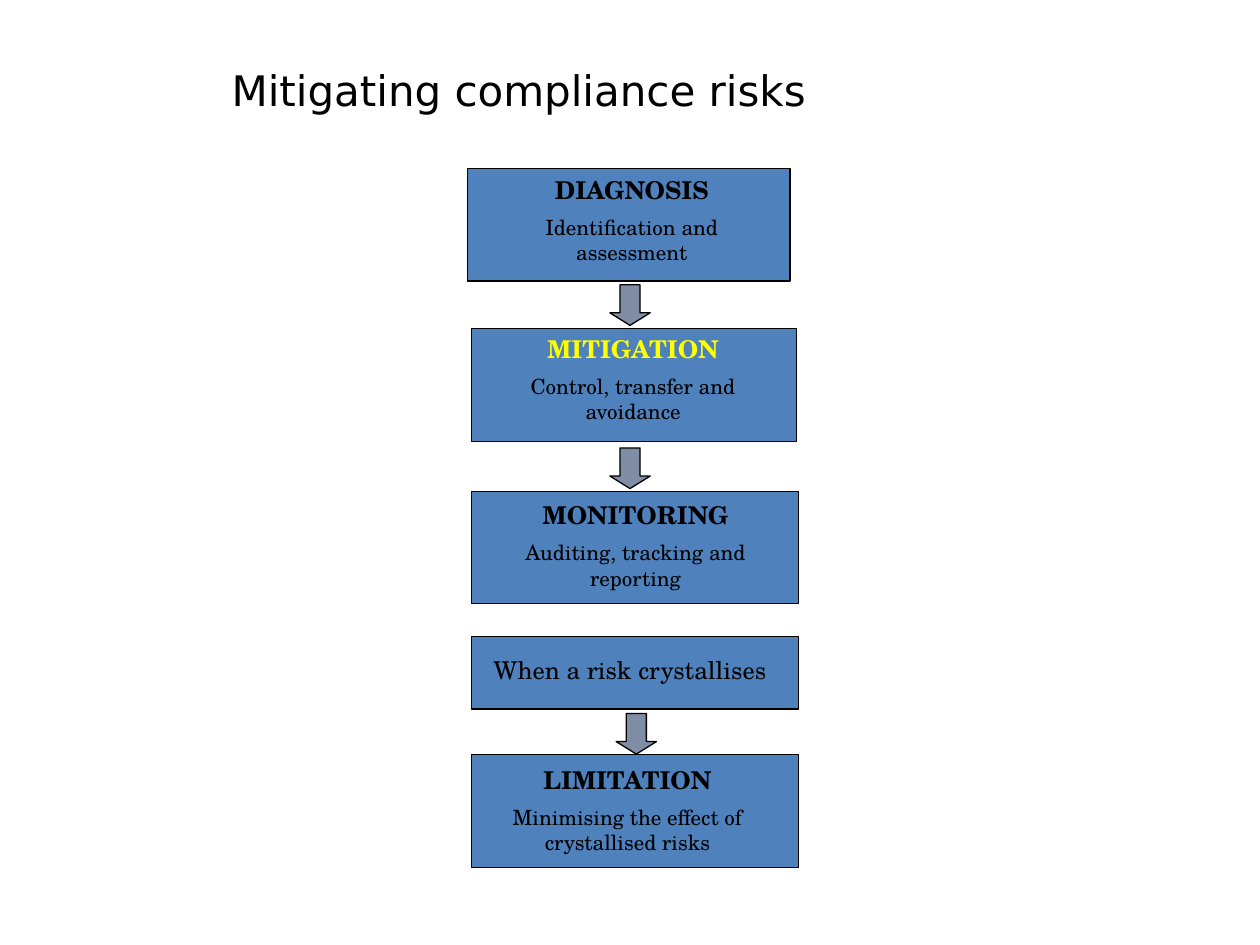
from dataclasses import dataclass

from pptx import Presentation
from pptx.dml.color import RGBColor
from pptx.enum.shapes import MSO_SHAPE
from pptx.enum.text import MSO_ANCHOR, PP_ALIGN
from pptx.util import Inches, Pt

RECT, ARROW = MSO_SHAPE.RECTANGLE, MSO_SHAPE.DOWN_ARROW
TOP, MIDDLE = MSO_ANCHOR.TOP, MSO_ANCHOR.MIDDLE
LEFT, CENTER = PP_ALIGN.LEFT, PP_ALIGN.CENTER
WIDE, HIGH = Inches(10), Inches(7.5)


@dataclass(frozen=True)
class Theme:
    ink: str = "000000"
    accent: str = "FFFF00"
    box: str = "4F81BD"
    arrow: str = "7F8EA5"
    sans: str = "DejaVu Sans"
    serif: str = "TeX Gyre Schola"
    title: int = 24
    head: int = 14
    body: int = 12
    gap: int = 6
    edge: float = 0.75


THEME = Theme()


# Lengths are percent of the slide's width (x, w) and height (y, h)
def area(x, y, w, h):
    return [int(side * part / 100)
            for side, part in zip((WIDE, HIGH, WIDE, HIGH), (x, y, w, h))]


def add_block(slide, kind, place, fill):
    shape = slide.shapes.add_shape(kind, *area(*place))
    shape.shadow.inherit = False
    shape.fill.solid()
    shape.fill.fore_color.rgb = RGBColor.from_string(fill)
    shape.line.color.rgb = RGBColor.from_string(THEME.ink)
    shape.line.width = Pt(THEME.edge)
    return shape


def add_arrow(slide, x, y):
    shape = add_block(slide, ARROW, (x, y, 3.2, 4.3), THEME.arrow)
    shape.adjustments[0] = 0.5
    shape.adjustments[1] = 0.31


# Each line is (text, size, color, bold)
def add_text(slide, place, lines, font=THEME.serif, align=CENTER, anchor=TOP):
    frame = slide.shapes.add_textbox(*area(*place)).text_frame
    frame.word_wrap = True
    frame.vertical_anchor = anchor
    for i, (text, size, color, bold) in enumerate(lines):
        para = frame.add_paragraph() if i else frame.paragraphs[0]
        para.text = text
        para.alignment = align
        para.space_before = Pt(THEME.gap if i else 0)
        para.font.name = font
        para.font.size = Pt(size)
        para.font.bold = bold
        para.font.color.rgb = RGBColor.from_string(color)


def add_step(slide, box, label, head, body, color=THEME.ink):
    x, y, w = box
    add_block(slide, RECT, (x, y, w, 11.9), THEME.box)
    left, top, width = label
    add_text(slide, (left, top, width, 13.1),
             [(head, THEME.head, color, True),
              (body, THEME.body, THEME.ink, False)])


def main():
    deck = Presentation()
    deck.slide_width, deck.slide_height = WIDE, HIGH
    slide = deck.slides.add_slide(deck.slide_layouts[6])

    # Title
    add_text(slide, (17.4, 4.8, 78.6, 9.47),
             [("Mitigating compliance risks", THEME.title, THEME.ink, False)],
             THEME.sans, LEFT, MIDDLE)

    # Steps: box and label as (left, top, width)
    steps = [
        ((37.1, 17.85, 25.6), (39, 17.85, 22.3),
         "DIAGNOSIS", "Identification and assessment", THEME.ink),
        ((37.4, 34.8, 25.8), (39.1, 34.67, 22.3),
         "MITIGATION", "Control, transfer and avoidance", THEME.accent),
        ((37.4, 52, 26), (37.3, 52.27, 26.3),
         "MONITORING", "Auditing, tracking and reporting", THEME.ink),
        ((37.4, 79.87, 26), (36.4, 80.27, 26.8),
         "LIMITATION", "Minimising the effect of crystallised risks", THEME.ink),
    ]
    for step in steps:
        add_step(slide, *step)

    # Trigger for the last step
    add_block(slide, RECT, (37.4, 67.33, 26, 7.7), THEME.box)
    add_text(slide, (37.4, 68.67, 25.2, 4.53),
             [("When a risk crystallises", THEME.head, THEME.ink, False)])

    # Arrows
    for x, y in ((48.4, 30.13), (48.4, 47.4), (48.9, 75.5)):
        add_arrow(slide, x, y)

    deck.save("out.pptx")


if __name__ == "__main__":
    main()
